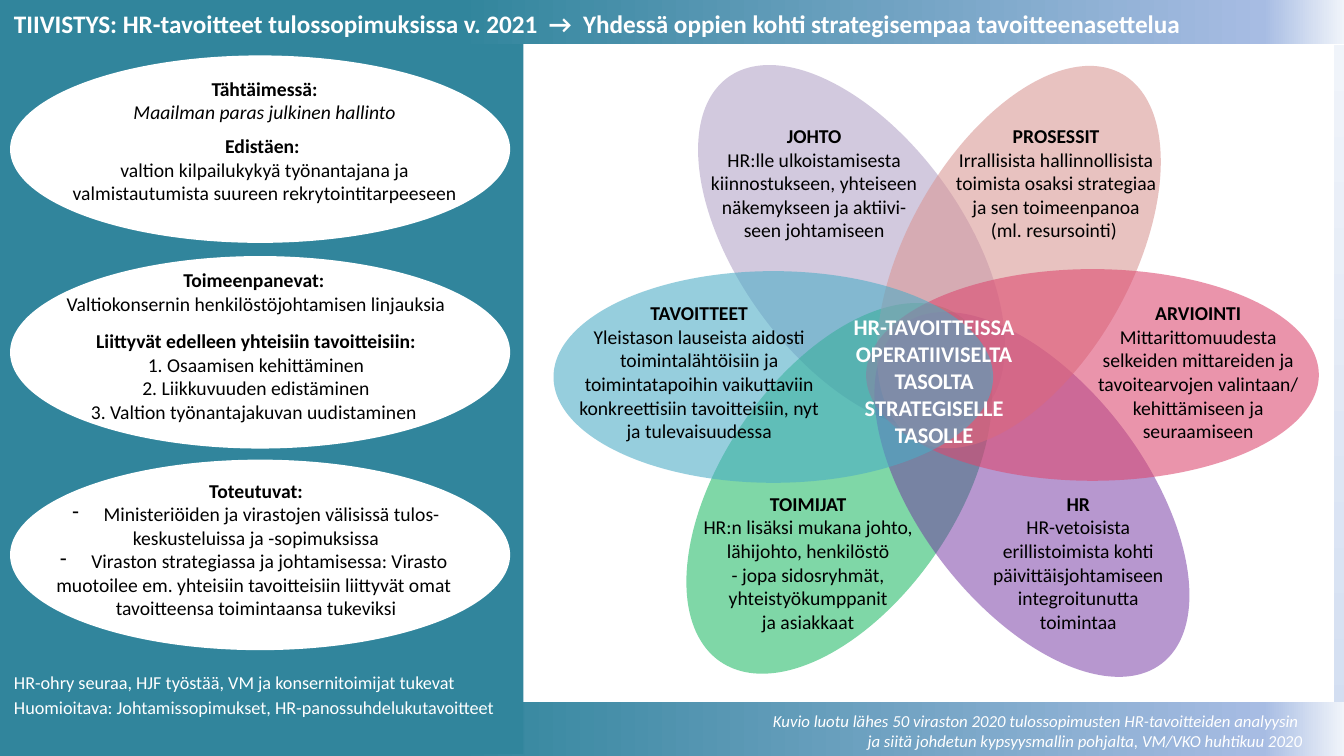
"""Builds the slide on HR targets in performance agreements."""
from lxml import etree
from pptx import Presentation, util as u
from pptx.dml.color import RGBColor
from pptx.enum import shapes, text
from pptx.oxml.ns import qn

PX = 9144
FONT = "Calibri"
COLORS = {
    "white": "FFFFFF", "black": "000000", "teal": "31859C",
    "pale": "F0F4FA", "mist": "D3DEF1", "sky": "A7BCE3",
    "lilac": "B3A2C7", "green": "00B050", "purple": "7030A0",
    "rose": "D99694", "red": "DC486F", "blue": "4BACC6",
}
BAR_STOPS = [(0, "pale"), (6, "sky"), (66, "teal")]
EDGE_STOPS = [(0, "pale"), (96, "mist")]
RECTANGLE = shapes.MSO_SHAPE.RECTANGLE
OVAL = shapes.MSO_SHAPE.OVAL
LEFT, CENTER, RIGHT = text.PP_ALIGN.LEFT, text.PP_ALIGN.CENTER, text.PP_ALIGN.RIGHT

presentation = Presentation()
presentation.slide_width = 1333 * PX
presentation.slide_height = 750 * PX
slide = presentation.slides.add_slide(presentation.slide_layouts[6])


def add_filled(kind, box, color=None, rotation=0, opacity=100, stops=()):
    shape = slide.shapes.add_shape(kind, *(value * PX for value in box))
    shape.rotation = rotation
    shape.shadow.inherit = False
    shape.line.fill.background()
    if stops:
        shape.fill.gradient()
        shape.fill.gradient_angle = 0
        stop_list = next(shape.element.iter(qn("a:gsLst")))
        for stop in list(stop_list):
            stop_list.remove(stop)
        for position, name in stops:
            stop = etree.SubElement(stop_list, qn("a:gs"), pos=str(position * 1000))
            etree.SubElement(stop, qn("a:srgbClr"), val=COLORS[name])
        return
    shape.fill.solid()
    shape.fill.fore_color.rgb = RGBColor.from_string(COLORS[color])
    if opacity < 100:
        fill_color = next(shape.element.iter(qn("a:srgbClr")))
        etree.SubElement(fill_color, qn("a:alpha"), val=str(opacity * 1000))


def add_text(box, lines, size=14, color="black", align=CENTER):
    """Each line is (text, style, gap before): b bold, i italic, - dash bullet."""
    frame = slide.shapes.add_textbox(*(value * PX for value in box)).text_frame
    frame.word_wrap = True
    for index, (wording, style, gap) in enumerate(lines):
        paragraph = frame.add_paragraph() if index else frame.paragraphs[0]
        paragraph.text = wording
        paragraph.alignment = align
        paragraph.space_before = u.Pt(gap)
        for run in paragraph.runs:
            run.font.name = FONT
            run.font.size = u.Pt(size)
            run.font.bold = "b" in style
            run.font.italic = "i" in style
            run.font.color.rgb = RGBColor.from_string(COLORS[color])
        if "-" in style:
            properties = paragraph._p.get_or_add_pPr()
            properties.set("marL", str(31 * PX))
            properties.set("indent", str(-31 * PX))
            etree.SubElement(properties, qn("a:buChar"), char="-")


add_filled(RECTANGLE, (974, 394, 708, 10), rotation=90, stops=EDGE_STOPS)
add_filled(RECTANGLE, (0, 696, 1333, 54), rotation=180, stops=BAR_STOPS)
add_filled(RECTANGLE, (0, 3, 519, 745), "teal")

petals = [
    ((636, 134, 417, 223), "lilac", 54, 58),
    ((624, 369, 417, 231), "green", 304.5, 50),
    ((812, 379, 423, 223), "purple", 52.5, 50),
    ((802, 144, 417, 222), "rose", 299.4, 58),
    ((859, 267, 449, 210), "red", 0, 58),
    ((549, 269, 436, 210), "blue", 0, 58),
]
for box, color, rotation, opacity in petals:
    add_filled(OVAL, box, color, rotation, opacity)

core = "HR-TAVOITTEISSA\nOPERATIIVISELTA TASOLTA\nSTRATEGISELLE\nTASOLLE"
add_text((800, 306, 253, 145), [(core, "b", 0)], 16, "white")

petal_texts = [
    ((694, 118, 227, 128), "JOHTO",
     "HR:lle ulkoistamisesta kiinnostukseen, yhteiseen näkemykseen ja aktiivi-seen johtamiseen"),
    ((956, 483, 227, 151), "HR",
     "HR-vetoisista erillistoimista kohti päivittäisjohtamiseen integroitunutta\ntoimintaa"),
    ((1075, 294, 227, 151), "ARVIOINTI",
     "Mittarittomuudesta selkeiden mittareiden ja tavoitearvojen valintaan/ kehittämiseen ja seuraamiseen"),
    ((556, 294, 275, 151), "TAVOITTEET",
     "Yleistason lauseista aidosti toimintalähtöisiin ja toimintatapoihin vaikuttaviin\n"
     "konkreettisiin tavoitteisiin, nyt ja tulevaisuudessa"),
    ((662, 483, 279, 151), "TOIMIJAT",
     "HR:n lisäksi mukana johto, lähijohto, henkilöstö\n"
     "- jopa sidosryhmät, yhteistyökumppanit\nja asiakkaat"),
    ((934, 118, 227, 128), "PROSESSIT",
     "Irrallisista hallinnollisista toimista osaksi strategiaa ja sen toimeenpanoa\n(ml. resursointi) "),
]
for box, heading, body in petal_texts:
    add_text(box, [(heading, "b", 0), (body, "", 0)])

stages = [
    ((10, 55, 496, 186), (15, 71, 495, 146), [
        ("Tähtäimessä:", "b", 0),
        ("Maailman paras julkinen hallinto", "i", 0),
        ("Edistäen: ", "b", 7.5),
        ("valtion kilpailukykyä työnantajana ja\nvalmistautumista suureen rekrytointitarpeeseen", "", 0),
    ]),
    ((10, 254, 496, 191), (8, 261, 492, 173), [
        ("Toimeenpanevat: ", "b", 0),
        ("Valtiokonsernin henkilöstöjohtamisen linjauksia", "", 0),
        ("Liittyvät edelleen yhteisiin tavoitteisiin:", "b", 10),
        ("1. Osaamisen kehittäminen\n2. Liikkuvuuden edistäminen\n"
         "3. Valtion työnantajakuvan uudistaminen ", "", 0),
    ]),
    ((10, 456, 496, 189), (8, 470, 492, 151), [
        ("Toteutuvat:", "b", 0),
        ("Ministeriöiden ja virastojen välisissä tulos-", "-", 0),
        ("keskusteluissa ja -sopimuksissa", "", 0),
        ("Viraston strategiassa ja johtamisessa: Virasto ", "-", 0),
        ("muotoilee em. yhteisiin tavoitteisiin liittyvät omat \ntavoitteensa toimintaansa tukeviksi", "", 0),
    ]),
]
for oval_box, text_box, lines in stages:
    add_filled(OVAL, oval_box, "white")
    add_text(text_box, lines)

add_filled(RECTANGLE, (0, 0, 1333, 44), rotation=180, stops=BAR_STOPS)
title = ("TIIVISTYS: HR-tavoitteet tulossopimuksissa v. 2021  →  "
         "Yhdessä oppien kohti strategisempaa tavoitteenasettelua")
add_text((4, 3, 1329, 40), [(title, "b", 0)], 18, "white", LEFT)

credit = ("Kuvio luotu lähes 50 viraston 2020 tulossopimusten HR-tavoitteiden analyysin \n"
          "ja siitä johdetun kypsyysmallin pohjalta, VM/VKO huhtikuu 2020")
add_text((536, 700, 766, 50), [(credit, "i", 0)], 12, "white", RIGHT)

notices = [
    ("HR-ohry seuraa, HJF työstää, VM ja konsernitoimijat tukevat", "", 0),
    ("Huomioitava: Johtamissopimukset, HR-panossuhdelukutavoitteet", "", 2),
]
add_text((4, 661, 515, 59), notices, 13, "white", LEFT)

presentation.save("out.pptx")
